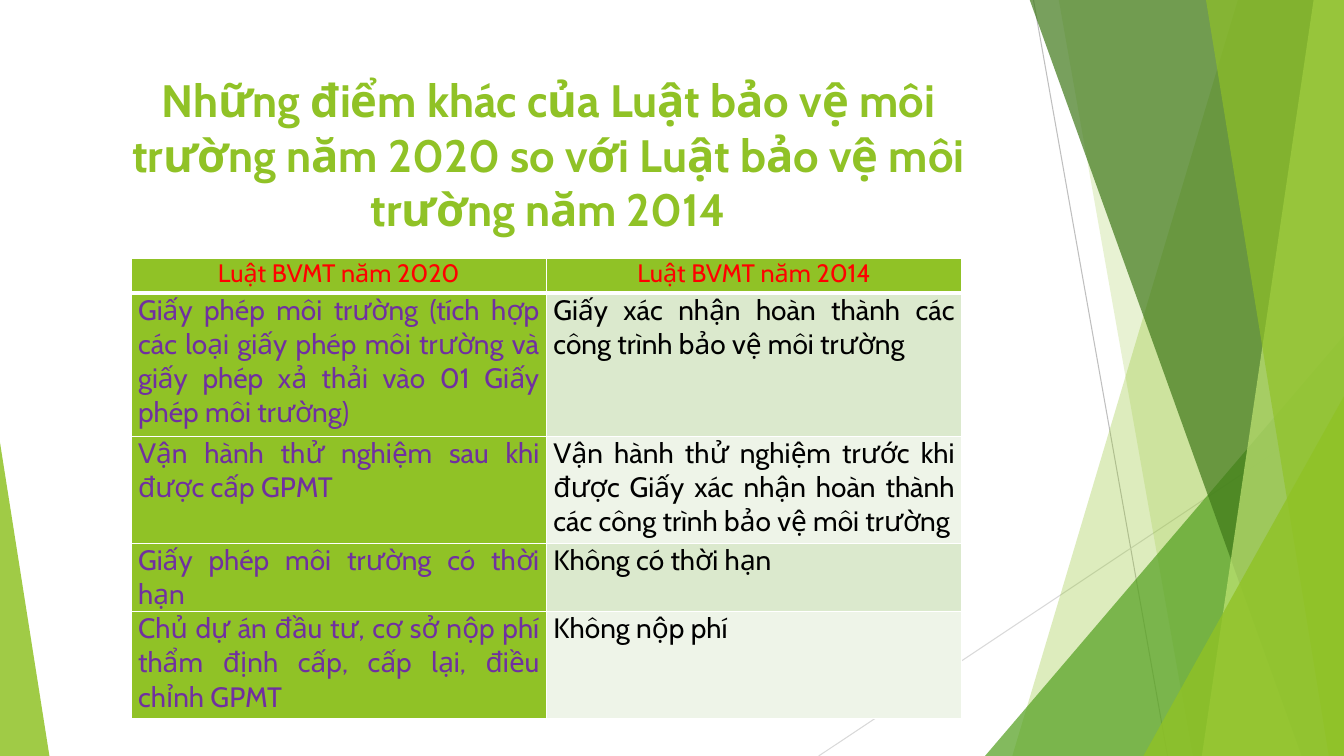
from lxml import etree
from pptx import Presentation
from pptx.dml.color import RGBColor
from pptx.enum.shapes import MSO_CONNECTOR, MSO_SHAPE
from pptx.enum.text import MSO_ANCHOR, PP_ALIGN
from pptx.oxml.ns import qn
from pptx.util import Inches, Pt

COLORS = {
    "green": "90C226", "leaf": "54A021", "forest": "3F7819", "lime": "C0E474",
    "gray": "BFBFBF", "light_gray": "D9D9D9", "white": "FFFFFF", "black": "000000",
    "red": "FF0000", "purple": "7030A0", "band_dark": "DBE9CD", "band_light": "EEF4E8",
}
FONT = "Cabin"
WIDTH, HEIGHT = 13.33, 7.5


def paint(shape, color, opacity):
    """Give a shape a translucent fill without line or shadow."""
    shape.shadow.inherit = False
    shape.line.fill.background()
    shape.fill.solid()
    shape.fill.fore_color.rgb = RGBColor.from_string(COLORS[color])
    color_element = shape.fill._xPr.find(qn("a:solidFill"))[0]
    etree.SubElement(color_element, qn("a:alpha"), val=str(opacity * 1000))


def write(paragraph, text, size, color, alignment, bold=False):
    paragraph.alignment = alignment
    run = paragraph.add_run()
    run.text = text
    run.font.name = FONT
    run.font.size = Pt(size)
    run.font.bold = bold
    run.font.color.rgb = RGBColor.from_string(COLORS[color])


presentation = Presentation()
presentation.slide_width = Inches(WIDTH)
presentation.slide_height = Inches(HEIGHT)
slide = presentation.slides.add_slide(presentation.slide_layouts[6])

# Thin background lines
for x1, y1, x2, y2, color in [
    (10.25, 0, 11.58, HEIGHT, "gray"),
    (WIDTH, 4.03, 8.12, HEIGHT, "light_gray"),
]:
    line = slide.shapes.add_connector(
        MSO_CONNECTOR.STRAIGHT, Inches(x1), Inches(y1), Inches(x2), Inches(y2))
    line.line.color.rgb = RGBColor.from_string(COLORS[color])
    line.line.width = Pt(0.75)
    etree.SubElement(line._element.spPr, qn("a:effectLst"))

# Facets: a band has its left edge at (top x, bottom x) and runs to the right
# side; a triangle has (left, top, width, apex) and stands on the bottom
facets = [
    ((12.28, 10.04), "green", 30),
    ((10.5, 11.83), "green", 20),
    ((9.77, 3.33, 3.56, 1), "leaf", 72),
    ((10.21, 12.91), "forest", 70),
    ((13.03, 11.92), "lime", 70),
    ((11.96, 13.18), "green", 65),
    ((11.34, 3.93, 1.99, 1), "green", 80),
    ((0, 4.39, 0.49, 0), "green", 85),
]
for geometry, color, opacity in facets:
    if len(geometry) == 2:
        top_x, bottom_x = geometry
        corners = [(WIDTH, -0.01), (WIDTH, HEIGHT), (bottom_x, HEIGHT)]
        builder = slide.shapes.build_freeform(Inches(top_x), Inches(-0.01))
        builder.add_line_segments([(Inches(x), Inches(y)) for x, y in corners], close=True)
        facet = builder.convert_to_shape()
    else:
        left, top, width, apex = geometry
        facet = slide.shapes.add_shape(
            MSO_SHAPE.ISOSCELES_TRIANGLE, Inches(left), Inches(top),
            Inches(width), Inches(HEIGHT - top))
        facet.adjustments[0] = apex
    paint(facet, color, opacity)

# Title
title = slide.shapes.add_textbox(Inches(0.74), Inches(0.67), Inches(9.4), Inches(1.44))
title_frame = title.text_frame
title_frame.word_wrap = True
title_frame.vertical_anchor = MSO_ANCHOR.TOP
title_frame.margin_left = title_frame.margin_right = Inches(0.12)
write(title_frame.paragraphs[0],
      "Những điểm khác của Luật bảo vệ môi trường năm 2020 so với Luật bảo vệ môi trường năm 2014",
      32.4, "green", PP_ALIGN.CENTER, bold=True)

# Comparison table
rows = [
    (0.35, "Luật BVMT năm 2020", "Luật BVMT năm 2014"),
    (1.42, "Giấy phép môi trường (tích hợp các loại giấy phép môi trường và giấy phép xả thải vào 01 Giấy phép môi trường)",
     "Giấy xác nhận hoàn thành các công trình bảo vệ môi trường"),
    (1.06, "Vận hành thử nghiệm sau khi được cấp GPMT",
     "Vận hành thử nghiệm trước khi được Giấy xác nhận hoàn thành các công trình bảo vệ môi trường"),
    (0.68, "Giấy phép môi trường có thời hạn", "Không có thời hạn"),
    (1.06, "Chủ dự án đầu tư, cơ sở nộp phí thẩm định cấp, cấp lại, điều chỉnh GPMT",
     "Không nộp phí"),
]
table = slide.shapes.add_table(
    len(rows), 2, Inches(1.3), Inches(2.56), Inches(8.24),
    Inches(sum(row[0] for row in rows))).table
for column in table.columns:
    column.width = Inches(4.12)

for row_index, (height, *texts) in enumerate(rows):
    table.rows[row_index].height = Inches(height)
    is_header = row_index == 0
    for column_index, text in enumerate(texts):
        cell = table.cell(row_index, column_index)
        cell.margin_left = cell.margin_right = Inches(0.07)
        cell.margin_top = cell.margin_bottom = 0

        # White borders, heavier between the header and the body
        for side in ("L", "R", "T", "B"):
            heavy = (row_index, side) in [(0, "B"), (1, "T")]
            border = etree.SubElement(cell._tc.get_or_add_tcPr(), qn(f"a:ln{side}"),
                                      w=str(Pt(3 if heavy else 1)))
            border_fill = etree.SubElement(border, qn("a:solidFill"))
            etree.SubElement(border_fill, qn("a:srgbClr"), val=COLORS["white"])

        if is_header or column_index == 0:
            background = "green"
        else:
            background = "band_dark" if row_index % 2 else "band_light"
        cell.fill.solid()
        cell.fill.fore_color.rgb = RGBColor.from_string(COLORS[background])

        paragraph = cell.text_frame.paragraphs[0]
        if is_header:
            write(paragraph, text, 18, "red", PP_ALIGN.CENTER)
        else:
            write(paragraph, text, 20, ("purple", "black")[column_index], PP_ALIGN.JUSTIFY)

presentation.save("out.pptx")
